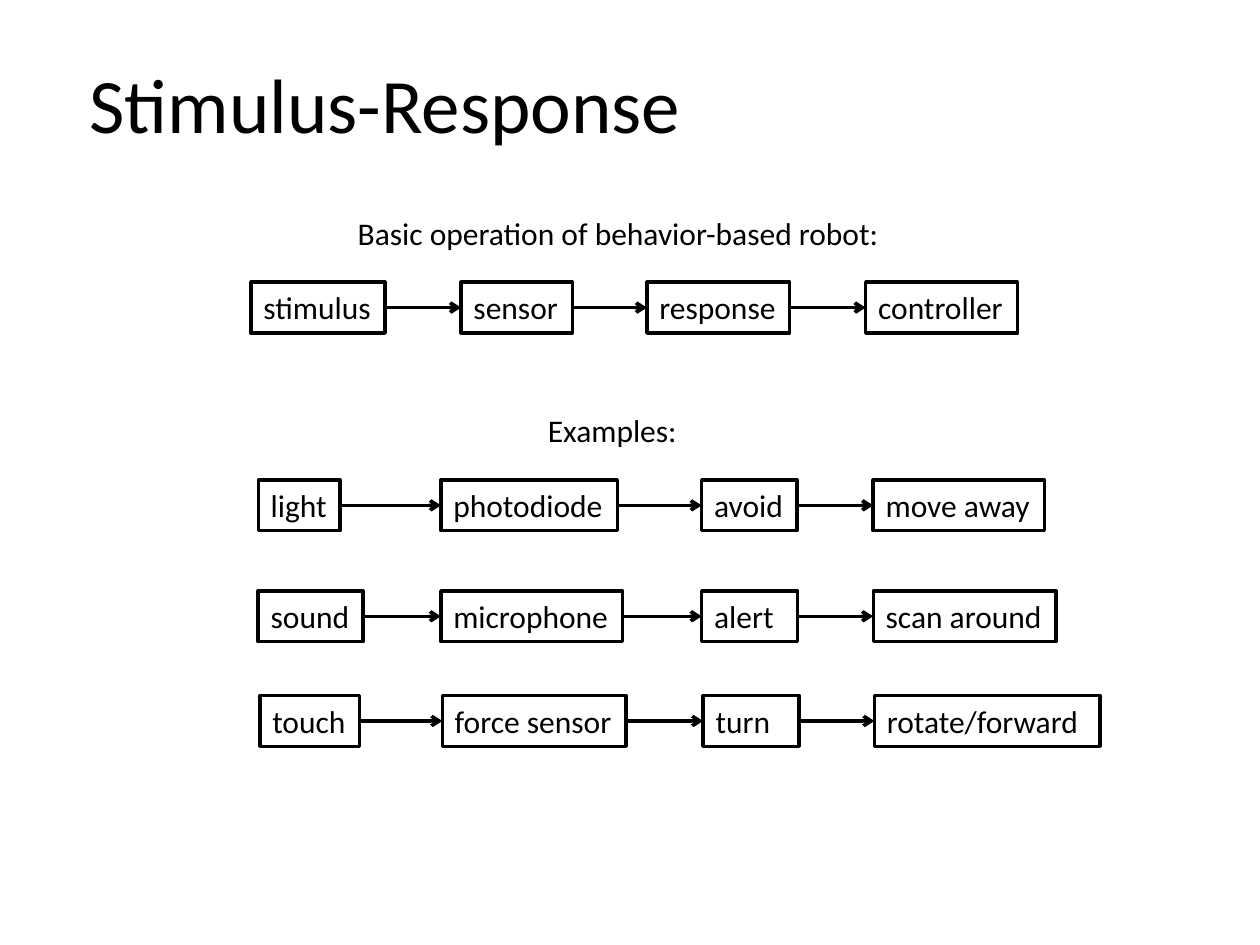
from lxml import etree
from pptx import Presentation
from pptx.dml.color import RGBColor
from pptx.enum import shapes, text
from pptx.oxml import ns
from pptx.util import Pt

BLACK = RGBColor(0, 0, 0)
BOX_H = 29
FRAME = {
    "word_wrap": True,
    "auto_size": text.MSO_AUTO_SIZE.NONE,
    "vertical_anchor": text.MSO_ANCHOR.TOP,
    "margin_left": Pt(7.2),
    "margin_right": Pt(0),
    "margin_top": Pt(3.6),
    "margin_bottom": Pt(3.6),
}

prs = Presentation()
prs.slide_width, prs.slide_height = Pt(720), Pt(540)
s = prs.slides.add_slide(prs.slide_layouts[5])


def write(sp, words, size):
    """Put left-aligned black text into a shape."""
    tf = sp.text_frame
    for name, value in FRAME.items():
        setattr(tf, name, value)
    p = tf.paragraphs[0]
    p.alignment = text.PP_ALIGN.LEFT
    r = p.add_run()
    r.text = words
    for name, value in {"size": Pt(size), "name": "Calibri"}.items():
        setattr(r.font, name, value)
    r.font.color.rgb = BLACK


def add_arrow(start, end):
    """Join the right side of one box to the left side of the next."""
    c = s.shapes.add_connector(shapes.MSO_CONNECTOR.STRAIGHT, 0, 0, 0, 0)
    c.begin_connect(start, 3)
    c.end_connect(end, 1)
    c.line.color.rgb = BLACK
    c.line.width = Pt(2)
    etree.SubElement(c.line._get_or_add_ln(), ns.qn("a:tailEnd"), type="arrow")
    etree.SubElement(c._element.spPr, ns.qn("a:effectLst"))


# Title
title = s.shapes.title
title.left, title.top, title.width, title.height = Pt(44), Pt(28.8), Pt(356.4), Pt(60.5)
write(title, "Stimulus-Response", 44)

# Headings above the chains
headings = [
    ("Basic operation of behavior-based robot:", 197.3, 118.8, 339.8),
    ("Examples:", 306, 231.1, 122.4),
]
for words, left, top, width in headings:
    sp = s.shapes.add_textbox(Pt(left), Pt(top), Pt(width), Pt(BOX_H))
    write(sp, words, 18)

# Chains: top, then word, left and width of each box
chains = [
    (161.3, [("stimulus", 143.5, 76.6), ("sensor", 263.5, 63.6),
             ("response", 369.7, 81.6), ("controller", 494.7, 86.7)]),
    (274.3, [("light", 147.6, 46.8), ("photodiode", 252, 100.8),
             ("avoid", 401, 54.4), ("move away", 499, 97.9)]),
    (337.7, [("sound", 147.6, 59.8), ("microphone", 252, 103.7),
             ("alert", 401, 54.7), ("scan around", 499, 104.4)]),
    (397.5, [("touch", 148.5, 56.9), ("force sensor", 252.8, 105.1),
             ("turn", 401.8, 54.9), ("rotate/forward", 499.7, 129)]),
]
for top, steps in chains:
    boxes = []
    for words, left, width in steps:
        sp = s.shapes.add_shape(shapes.MSO_SHAPE.RECTANGLE,
                                Pt(left), Pt(top), Pt(width), Pt(BOX_H))
        sp.shadow.inherit = False
        sp.fill.background()
        sp.line.color.rgb = BLACK
        sp.line.width = Pt(2)
        write(sp, words, 18)
        boxes.append(sp)
    for start, end in zip(boxes, boxes[1:]):
        add_arrow(start, end)

prs.save("out.pptx")
